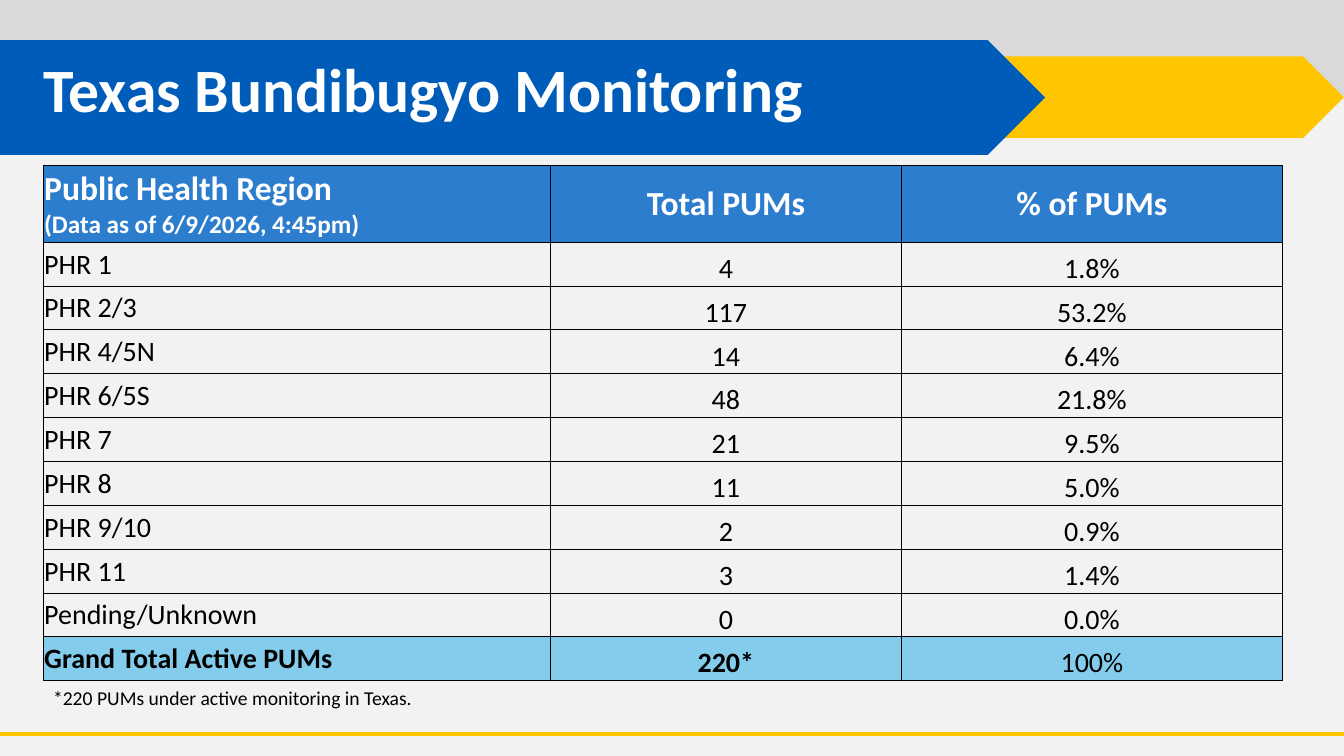
import dataclasses
import typing

import lxml.etree
import pptx
import pptx.dml.color
import pptx.enum.shapes
import pptx.enum.text
import pptx.oxml.ns
import pptx.util

Pt = pptx.util.Pt
Align = pptx.enum.text.PP_ALIGN
Anchor = pptx.enum.text.MSO_ANCHOR
Preset = pptx.enum.shapes.MSO_SHAPE


@dataclasses.dataclass(frozen=True)
class Theme:
    font: str = "Calibri"
    page: str = "F2F2F2"
    grey: str = "D9D9D9"
    gold: str = "FFC600"
    navy: str = "005CB9"
    header: str = "2D7DCE"
    total: str = "83CCEB"
    white: str = "FFFFFF"
    black: str = "000000"
    title_size: float = 44
    header_size: float = 24
    date_size: float = 18
    body_size: float = 20
    note_size: float = 14


THEME = Theme()


@dataclasses.dataclass(frozen=True)
class Band:
    preset: Preset
    left: float
    top: float
    width: float
    height: float
    color: str


@dataclasses.dataclass(frozen=True)
class Line:
    text: str
    size: float = THEME.body_size
    color: str = THEME.black
    bold: bool = False


@dataclasses.dataclass(frozen=True)
class RegionRow:
    region: str
    pums: str
    share: str


BANDS = [
    Band(Preset.RECTANGLE, 0, -2, 960, 70.5, THEME.grey),
    Band(Preset.PENTAGON, 510.2, 40.3, 449.8, 58.3, THEME.gold),
    Band(Preset.PENTAGON, 0, 28.6, 746.6, 82, THEME.navy),
]

REGIONS = [
    RegionRow("PHR 1", "4", "1.8%"),
    RegionRow("PHR 2/3", "117", "53.2%"),
    RegionRow("PHR 4/5N", "14", "6.4%"),
    RegionRow("PHR 6/5S", "48", "21.8%"),
    RegionRow("PHR 7", "21", "9.5%"),
    RegionRow("PHR 8", "11", "5.0%"),
    RegionRow("PHR 9/10", "2", "0.9%"),
    RegionRow("PHR 11", "3", "1.4%"),
    RegionRow("Pending/Unknown", "0", "0.0%"),
]

COLUMN_WIDTHS = [362.4, 250.6, 272.4]
HEADER_HEIGHT = 54.8
ROW_HEIGHT = 31.35
TABLE_LEFT, TABLE_TOP = 30.8, 118.1

LABEL_FORMAT = {
    "vertical_anchor": Anchor.MIDDLE,
    "margin_left": Pt(0.75),
    "margin_right": Pt(0.75),
    "margin_top": Pt(0.75),
    "margin_bottom": Pt(0),
}
NUMBER_FORMAT = {
    "vertical_anchor": Anchor.BOTTOM,
    "margin_left": Pt(5),
    "margin_right": Pt(5),
    "margin_top": Pt(0),
    "margin_bottom": Pt(0),
}


def rgb(color: str) -> pptx.dml.color.RGBColor:
    return pptx.dml.color.RGBColor.from_string(color)


def apply_format(target: typing.Any, values: dict[str, typing.Any]) -> None:
    for name, value in values.items():
        setattr(target, name, value)


def write_lines(frame: typing.Any, lines: list[Line], align: Align = Align.LEFT) -> None:
    for index, line in enumerate(lines):
        paragraph = frame.add_paragraph() if index else frame.paragraphs[0]
        paragraph.alignment = align
        run = paragraph.add_run()
        run.text = line.text
        apply_format(run.font, {"name": THEME.font, "size": Pt(line.size), "bold": line.bold})
        run.font.color.rgb = rgb(line.color)


def draw_band(slide: typing.Any, band: Band) -> None:
    shape = slide.shapes.add_shape(
        band.preset, Pt(band.left), Pt(band.top), Pt(band.width), Pt(band.height)
    )
    shape.shadow.inherit = False
    shape.fill.solid()
    shape.fill.fore_color.rgb = rgb(band.color)
    shape.line.fill.background()


def draw_footer_rule(slide: typing.Any) -> None:
    rule = slide.shapes.add_connector(
        pptx.enum.shapes.MSO_CONNECTOR.STRAIGHT, Pt(0), Pt(524.2), Pt(960), Pt(524.2)
    )
    rule.line.color.rgb = rgb(THEME.gold)
    rule.line.width = Pt(3)
    lxml.etree.SubElement(rule.element.spPr, pptx.oxml.ns.qn("a:effectLst"))


def draw_title(slide: typing.Any, text: str) -> None:
    title = slide.shapes.title
    slide.shapes.element.append(title.element)
    apply_format(title, {"left": Pt(23.8), "top": Pt(13.7), "width": Pt(828), "height": Pt(104.4)})
    apply_format(title.text_frame, {
        "vertical_anchor": Anchor.MIDDLE,
        "word_wrap": True,
        "auto_size": pptx.enum.text.MSO_AUTO_SIZE.NONE,
    })
    write_lines(title.text_frame, [Line(text, THEME.title_size, THEME.white, True)])
    title.text_frame.paragraphs[0].line_spacing = 0.9


def add_borders(cell: typing.Any) -> None:
    qn = pptx.oxml.ns.qn
    properties = cell._tc.get_or_add_tcPr()
    for side in ("lnL", "lnR", "lnT", "lnB"):
        border = lxml.etree.SubElement(properties, qn(f"a:{side}"), w=str(Pt(0.5)))
        fill = lxml.etree.SubElement(border, qn("a:solidFill"))
        lxml.etree.SubElement(fill, qn("a:srgbClr"), val=THEME.black)


def fill_cell(
    cell: typing.Any, lines: list[Line], layout: dict[str, typing.Any],
    align: Align, color: str | None,
) -> None:
    add_borders(cell)
    apply_format(cell, layout)
    if color:
        cell.fill.solid()
        cell.fill.fore_color.rgb = rgb(color)
    else:
        cell.fill.background()
    write_lines(cell.text_frame, lines, align)


def draw_region_table(slide: typing.Any) -> None:
    headings = [
        [Line(text, THEME.header_size, THEME.white, True)]
        for text in ("Public Health Region", "Total PUMs", "% of PUMs")
    ]
    headings[0].append(Line("(Data as of 6/9/2026, 4:45pm)", THEME.date_size, THEME.white, True))
    body = [[[Line(text)] for text in dataclasses.astuple(row)] for row in REGIONS]
    totals = [[Line("Grand Total Active PUMs", bold=True)], [Line("220*", bold=True)], [Line("100%")]]
    content = [headings, *body, totals]
    heights = [HEADER_HEIGHT] + [ROW_HEIGHT] * (len(content) - 1)
    table = slide.shapes.add_table(
        len(content), len(COLUMN_WIDTHS), Pt(TABLE_LEFT), Pt(TABLE_TOP),
        Pt(sum(COLUMN_WIDTHS)), Pt(sum(heights)),
    ).table
    apply_format(table, {"first_row": False, "horz_banding": False})
    for column, width in zip(table.columns, COLUMN_WIDTHS):
        column.width = Pt(width)
    row_colors = [THEME.header] + [None] * len(body) + [THEME.total]
    for r, (lines_by_column, height, color) in enumerate(zip(content, heights, row_colors)):
        table.rows[r].height = Pt(height)
        for c, lines in enumerate(lines_by_column):
            layout = NUMBER_FORMAT if r and c else LABEL_FORMAT
            align = Align.CENTER if c else Align.LEFT
            fill_cell(table.cell(r, c), lines, layout, align, color)


def draw_footnote(slide: typing.Any, text: str) -> None:
    footnote = slide.shapes.add_textbox(Pt(30.8), Pt(486.7), Pt(864), Pt(24.2))
    footnote.text_frame.word_wrap = True
    write_lines(footnote.text_frame, [Line(text, THEME.note_size)])


def main() -> None:
    deck = pptx.Presentation()
    apply_format(deck, {"slide_width": Pt(960), "slide_height": Pt(540)})
    slide = deck.slides.add_slide(deck.slide_layouts.get_by_name("Title Only"))
    slide.background.fill.solid()
    slide.background.fill.fore_color.rgb = rgb(THEME.page)
    for band in BANDS:
        draw_band(slide, band)
    draw_footer_rule(slide)
    draw_title(slide, "Texas Bundibugyo Monitoring")
    draw_region_table(slide)
    draw_footnote(slide, "*220 PUMs under active monitoring in Texas.")
    deck.save("out.pptx")


if __name__ == "__main__":
    main()
